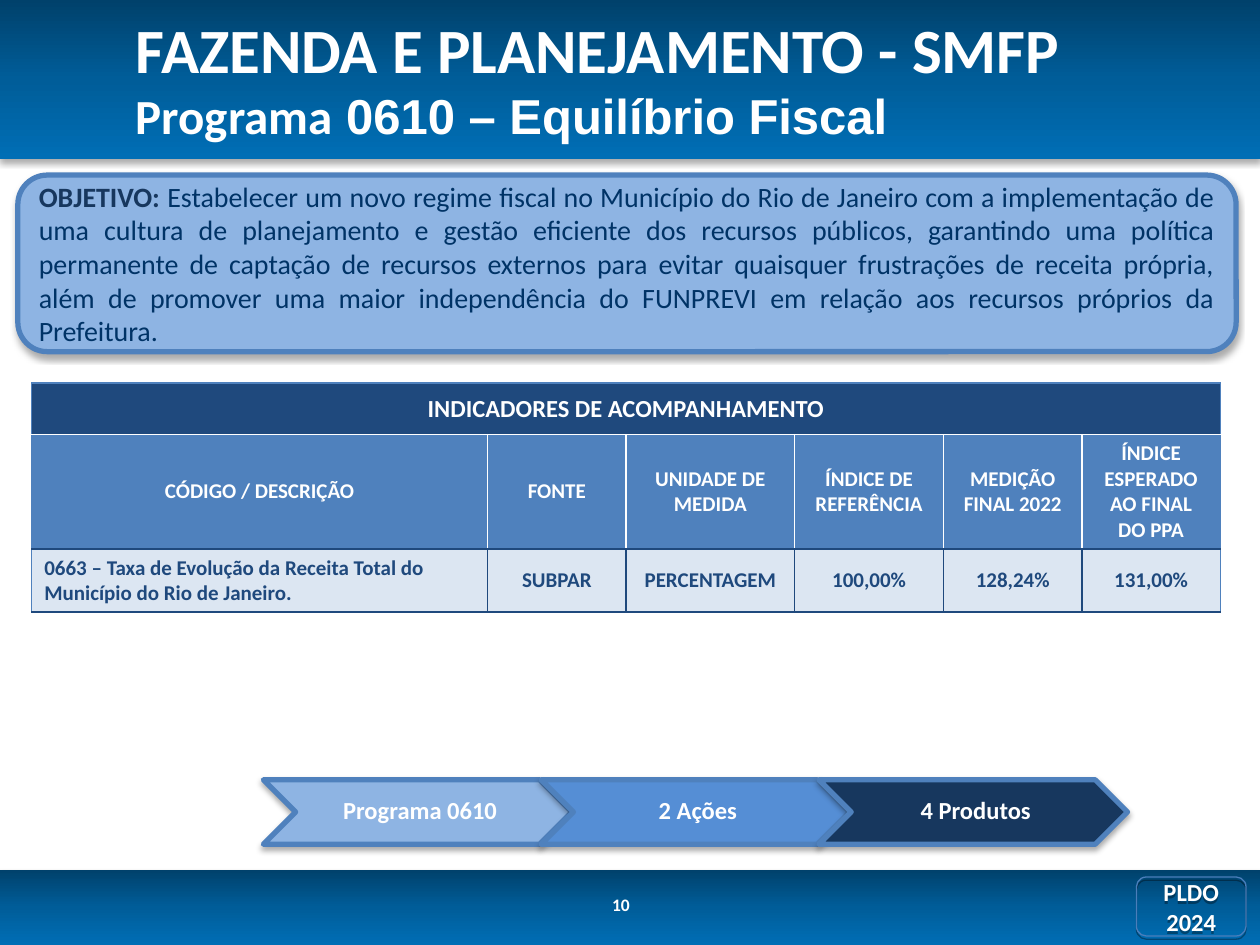
from copy import deepcopy

from lxml import etree
from pptx import Presentation
from pptx import util as u
from pptx.dml import color as dml
from pptx.enum import shapes, text
from pptx.oxml import ns

LEFT, CENTER, JUSTIFY = text.PP_ALIGN.LEFT, text.PP_ALIGN.CENTER, text.PP_ALIGN.JUSTIFY
WHITE, NAVY, BLUE, PALE, SKY, DEEP = "FFFFFF", "1F497D", "4F81BD", "DCE6F2", "8EB4E3", "17375E"
BAR_STOPS = [(0, "00416B"), (0.5, "005D99"), (1, "006EB5")]
SOFT_SHADOW = (32, 3.5, 2.2)
HARD_SHADOW = (35, 0, 1.8)
OBJECTIVE = (
    "Estabelecer um novo regime fiscal no Município do Rio de Janeiro com a implementação de "
    "uma cultura de planejamento e gestão eficiente dos recursos públicos, garantindo uma política "
    "permanente de captação de recursos externos para evitar quaisquer frustrações de receita própria, "
    "além de promover uma maior independência do FUNPREVI em relação aos recursos próprios da Prefeitura."
)
COLUMNS = [9.19, 2.79, 3.4, 3, 2.79, 2.79]
ROWS = [
    (1.04, NAVY, ["INDICADORES DE ACOMPANHAMENTO"]),
    (2.31, BLUE, ["CÓDIGO / DESCRIÇÃO", "FONTE", "UNIDADE DE MEDIDA", "ÍNDICE DE REFERÊNCIA",
                  "MEDIÇÃO FINAL 2022", "ÍNDICE ESPERADO AO FINAL DO PPA"]),
    (1.27, PALE, ["0663 – Taxa de Evolução da Receita Total do Município do Rio de Janeiro.",
                  "SUBPAR", "PERCENTAGEM", "100,00%", "128,24%", "131,00%"]),
]
STEPS = [("Programa 0610", SKY), ("2 Ações", "558ED5"), ("4 Produtos", DEEP)]


def rgb(code):
    return dml.RGBColor.from_string(code)


class Painter:
    """Draws styled elements on the current slide."""

    font = "Calibri"

    def __init__(self, page):
        self.page = page

    def fill_text(self, frame, spans, size, color=WHITE, align=CENTER, bold=True):
        frame.word_wrap = True
        frame.vertical_anchor = text.MSO_ANCHOR.MIDDLE
        para = frame.paragraphs[0]
        para.alignment = align
        para.font.name, para.font.size = self.font, u.Pt(size)
        para.font.bold, para.font.color.rgb = bold, rgb(color)
        for words, changes in spans:
            if words == "\n":
                para.add_line_break()
                continue
            span = para.add_run()
            span.text = words
            span.font.name = changes.get("name")
            span.font.size = changes.get("size")
            span.font.bold = changes.get("bold")
            if "color" in changes:
                span.font.color.rgb = rgb(changes["color"])
        return para

    def label(self, area, spans, size, align=LEFT):
        box = self.page.shapes.add_textbox(*map(u.Cm, area))
        self.fill_text(box.text_frame, spans, size, align=align)

    def shape(self, kind, area, fill=None, line=None, width=3, shadow=SOFT_SHADOW):
        box = self.page.shapes.add_shape(kind, *map(u.Cm, area))
        if fill:
            box.fill.solid()
            box.fill.fore_color.rgb = rgb(fill)
        else:
            box.fill.background()
        if line:
            box.line.color.rgb = rgb(line)
            box.line.width = u.Pt(width)
        else:
            box.line.fill.background()
        self.cast_shadow(box, *shadow)
        return box

    def cast_shadow(self, box, opacity, blur, distance):
        box.shadow.inherit = False
        effects = box._element.spPr.find(ns.qn("a:effectLst"))
        outer = etree.SubElement(effects, ns.qn("a:outerShdw"), blurRad=str(u.Pt(blur)),
                                 dist=str(u.Pt(distance)), dir="5400000", rotWithShape="0")
        tint = etree.SubElement(outer, ns.qn("a:srgbClr"), val="000000")
        etree.SubElement(tint, ns.qn("a:alpha"), val=str(opacity * 1000))

    def bar(self, top, height):
        box = self.shape(shapes.MSO_SHAPE.RECTANGLE, (0, top, 25.4, height))
        box.fill.gradient()
        box.fill.gradient_angle = 270
        stops = box._element.spPr.find(".//" + ns.qn("a:gsLst"))
        stops.append(deepcopy(stops[0]))
        for stop, (position, code) in zip(box.fill.gradient_stops, BAR_STOPS):
            stop.position = position
            stop.color.rgb = rgb(code)

    def borders(self, cell, colors):
        properties = cell._tc.get_or_add_tcPr()
        for index, (side, code) in enumerate(zip("LRTB", colors)):
            edge = etree.Element(ns.qn(f"a:ln{side}"), w=str(u.Pt(1)))
            fill = etree.SubElement(edge, ns.qn("a:solidFill"))
            etree.SubElement(fill, ns.qn("a:srgbClr"), val=code)
            properties.insert(index, edge)

    def table(self, left, top):
        height = sum(row[0] for row in ROWS)
        area = map(u.Cm, (left, top, sum(COLUMNS), height))
        grid = self.page.shapes.add_table(len(ROWS), len(COLUMNS), *area).table
        for column, width in zip(grid.columns, COLUMNS):
            column.width = u.Cm(width)
        last = len(COLUMNS) - 1
        grid.cell(0, 0).merge(grid.cell(0, last))
        inner = [BLUE, WHITE, NAVY]
        across = [BLUE, WHITE, NAVY, NAVY]
        for r, (height, fill, words) in enumerate(ROWS):
            grid.rows[r].height = u.Cm(height)
            for c in range(len(COLUMNS)):
                cell = grid.cell(r, c)
                cell.fill.solid()
                cell.fill.fore_color.rgb = rgb(fill)
                cell.vertical_anchor = text.MSO_ANCHOR.MIDDLE
                sides = [BLUE if c == 0 else inner[r], BLUE if c == last else inner[r]]
                self.borders(cell, sides + across[r:r + 2])
                if c < len(words):
                    if r == 2 and c >= last - 1:
                        cell.margin_left = cell.margin_right = u.Cm(0.03)
                    self.fill_text(cell.text_frame, [(words[c], {})], 12 if r else 14,
                                   NAVY if r == 2 else WHITE, LEFT if (r, c) == (2, 0) else CENTER)

    def chevron(self, area, words, fill):
        box = self.shape(shapes.MSO_SHAPE.CHEVRON, area, fill, BLUE)
        frame = box.text_frame
        frame.margin_left = u.Cm(0.15)
        frame.margin_right = frame.margin_top = frame.margin_bottom = u.Cm(0.05)
        self.fill_text(frame, [(words, {})], 14).line_spacing = 0.9


def main():
    deck = Presentation()
    deck.slide_width, deck.slide_height = u.Cm(25.4), u.Cm(19.05)
    painter = Painter(deck.slides.add_slide(deck.slide_layouts[6]))
    rounded = shapes.MSO_SHAPE.ROUNDED_RECTANGLE

    painter.bar(0, 3.2)
    painter.bar(17.53, 1.52)
    painter.label((12.09, 17.93, 1.19, 0.61), [("10", {})], 10)
    badge = painter.shape(rounded, (22.91, 17.68, 2.21, 1.19), None, "4A7EBB", 0.75, HARD_SHADOW)
    painter.fill_text(badge.text_frame, [("PLDO 2024", {})], 14)

    subtitle = {"size": u.Pt(28)}
    painter.label((2.49, 0.41, 24.1, 2.31), [
        ("FAZENDA E PLANEJAMENTO - SMFP", {}),
        ("\n", {}),
        ("Programa", subtitle),
        (" 0610 – Equilíbrio Fiscal", {**subtitle, "name": "Arial"}),
    ], 36)

    painter.table(0.64, 7.72)
    panel = painter.shape(rounded, (0.36, 3.53, 24.56, 3.56), SKY, BLUE)
    painter.fill_text(panel.text_frame, [
        ("OBJETIVO: ", {"bold": True, "color": DEEP}),
        (OBJECTIVE, {}),
    ], 16, "003366", JUSTIFY, bold=False)

    for index, (words, fill) in enumerate(STEPS):
        painter.chevron((5.31 + 5.6 * index, 15.72, 6.22, 1.3), words, fill)
    deck.save("out.pptx")


if __name__ == "__main__":
    main()
